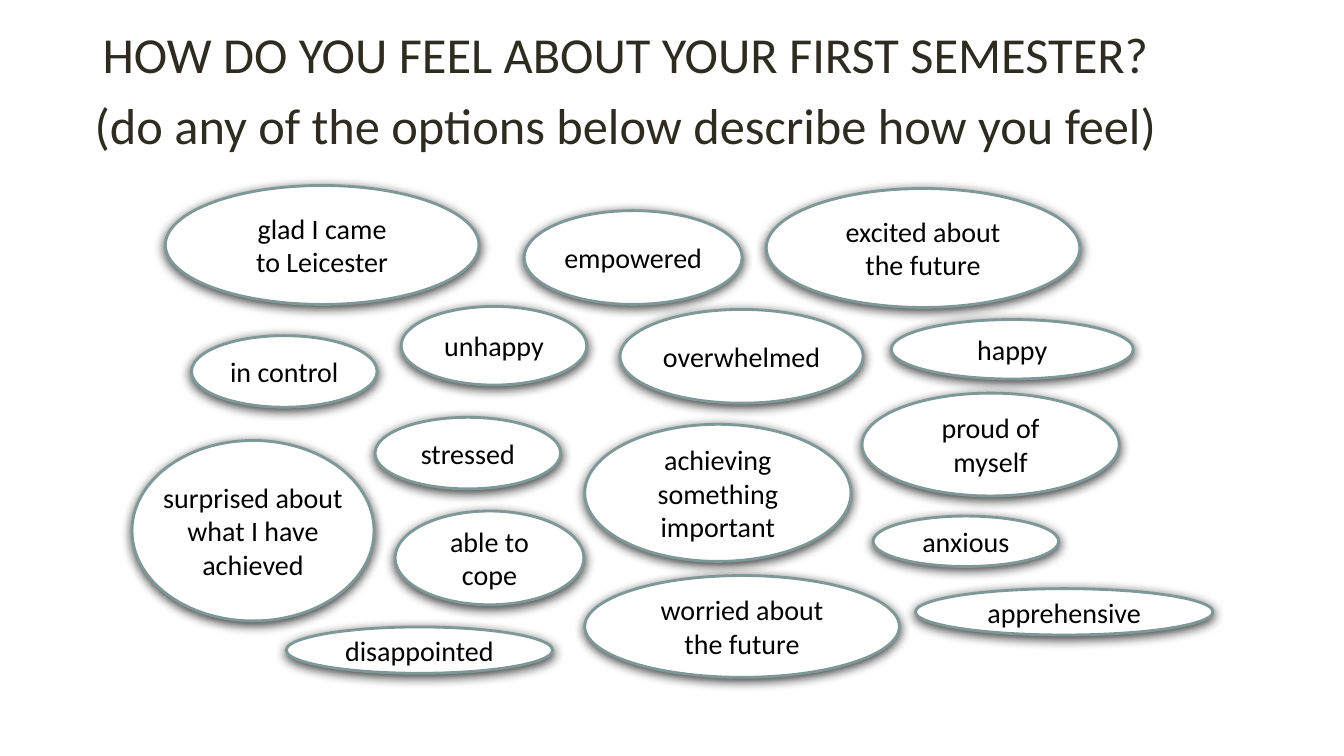
"""Build a slide of feeling bubbles about the first semester."""
from lxml import etree
from pptx import Presentation
from pptx.dml.color import RGBColor
from pptx.enum.shapes import MSO_SHAPE
from pptx.enum.text import MSO_ANCHOR, PP_ALIGN
from pptx.oxml import parse_xml
from pptx.util import Emu, Pt

EMU_PER_PX = 9144
INSET = 5
SHADOW = (
    '<a:effectLst xmlns:a="http://schemas.openxmlformats.org/drawingml/2006/main">'
    '<a:outerShdw blurRad="101600" dist="25400" dir="5400000" rotWithShape="0">'
    '<a:srgbClr val="000000"><a:alpha val="75000"/></a:srgbClr>'
    '</a:outerShdw></a:effectLst>'
)
TITLE = [
    "HOW DO YOU FEEL ABOUT YOUR FIRST SEMESTER?",
    "(do any of the options below describe how you feel)",
]
BUBBLES = [
    ("excited about\nthe future", 760, 187, 311, 118),
    ("proud of\nmyself", 855, 390, 255, 102),
    ("empowered", 520, 209, 216, 93),
    ("achieving\nsomething\nimportant", 580, 421, 264, 136),
    ("anxious", 866, 512, 184, 50),
    ("worried about\nthe future", 580, 571, 312, 101),
    ("unhappy", 398, 304, 184, 78),
    ("stressed", 372, 414, 184, 71),
    ("able to\ncope", 392, 507, 187, 93),
    ("happy", 884, 317, 240, 59),
    ("overwhelmed", 615, 307, 241, 93),
    ("disappointed", 284, 622, 264, 46),
    ("glad I came\nto Leicester", 164, 184, 311, 118),
    ("surprised about\nwhat I have\nachieved", 131, 437, 240, 179),
    ("in control", 190, 333, 184, 71),
    ("apprehensive", 908, 584, 295, 46),
]


def px(*lengths):
    return [Emu(length * EMU_PER_PX) for length in lengths]


def write_text(shape, text, size, color):
    frame = shape.text_frame
    frame.margin_left, frame.margin_top, frame.margin_right, frame.margin_bottom = px(*[INSET] * 4)
    frame.text = text
    for paragraph in frame.paragraphs:
        paragraph.alignment = PP_ALIGN.CENTER
        for run in paragraph.runs:
            run.font.name = "Calibri"
            run.font.size = Pt(size)
            run.font.color.rgb = RGBColor.from_string(color)
    return frame


presentation = Presentation()
presentation.slide_width, presentation.slide_height = px(1333, 750)
slide = presentation.slides.add_slide(presentation.slide_layouts[6])

for text, left, top, width, height in BUBBLES:
    bubble = slide.shapes.add_shape(MSO_SHAPE.OVAL, *px(left, top, width, height))
    bubble.fill.solid()
    bubble.fill.fore_color.rgb = RGBColor.from_string("FFFFFF")
    bubble.line.color.rgb = RGBColor.from_string("7D9897")
    bubble.line.width = Pt(2)
    bubble.element.spPr.append(parse_xml(SHADOW))
    bubble_frame = write_text(bubble, text, 20, "000000")
    bubble_frame.word_wrap = False
    bubble_frame.vertical_anchor = MSO_ANCHOR.MIDDLE

title = slide.shapes.add_textbox(*px(0, 25, 1241, 150))
title_frame = write_text(title, "\n".join(TITLE), 36, "2E2B21")
title_frame.word_wrap = True
for paragraph in title_frame.paragraphs:
    paragraph.line_spacing = 0.9
    paragraph.space_before = Pt(12)

presentation.save("out.pptx")
